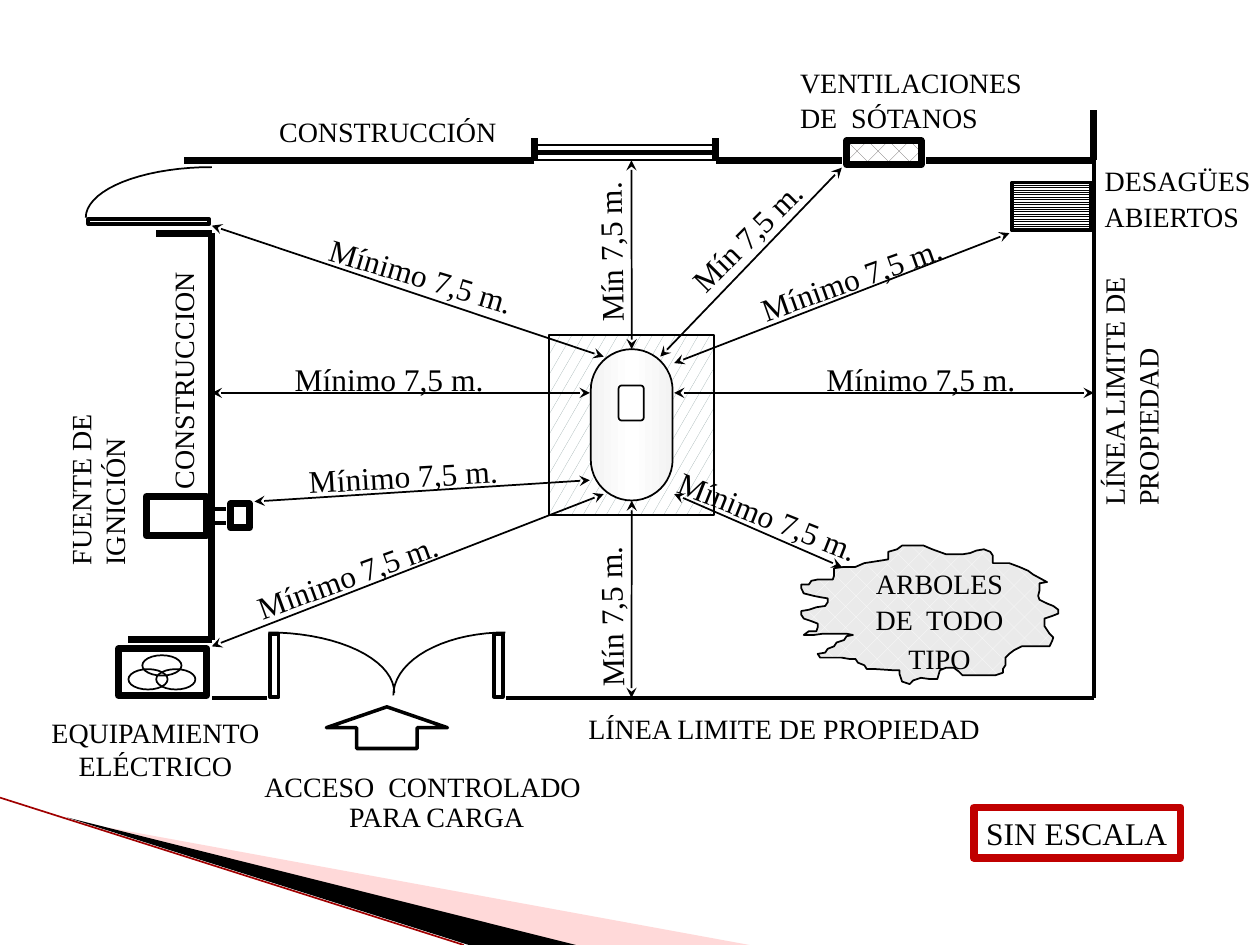
import copy
import math

from lxml import etree
from pptx import Presentation
from pptx.dml.color import RGBColor
from pptx.enum.dml import MSO_PATTERN
from pptx.enum.shapes import MSO_CONNECTOR, MSO_SHAPE
from pptx.enum.text import MSO_AUTO_SIZE, PP_ALIGN
from pptx.oxml.ns import qn
from pptx.util import Cm, Pt

RECT, ROUND, OVAL = MSO_SHAPE.RECTANGLE, MSO_SHAPE.ROUNDED_RECTANGLE, MSO_SHAPE.OVAL
ARROW = MSO_SHAPE.UP_ARROW
STRAIGHT = MSO_CONNECTOR.STRAIGHT
DIAMONDS, CONFETTI = MSO_PATTERN.DOTTED_DIAMOND, MSO_PATTERN.SMALL_CONFETTI
STRIPES = MSO_PATTERN.LIGHT_HORIZONTAL
LEFT, CENTER = PP_ALIGN.LEFT, PP_ALIGN.CENTER
BLACK = RGBColor(0x00, 0x00, 0x00)
WHITE = RGBColor(0xFF, 0xFF, 0xFF)
RED = RGBColor(0xC0, 0x00, 0x00)
DARK_RED = RGBColor(0xA0, 0x00, 0x00)
PINK = RGBColor(0xFF, 0xA2, 0xA2)
PALE = RGBColor(0xEA, 0xEA, 0xEA)
STEEL = RGBColor(0xF3, 0xF3, 0xF3)
HATCH = RGBColor(0x96, 0xA9, 0xA9)
GREY = RGBColor(0x69, 0x64, 0x64)


def paint(s, fill=None, line=BLACK, width=1):
    """Fill is None, a colour, or (pattern, foreground, background)."""
    s.shadow.inherit = False
    if fill is None:
        s.fill.background()
    elif isinstance(fill, RGBColor):
        s.fill.solid()
        s.fill.fore_color.rgb = fill
    else:
        s.fill.patterned()
        s.fill.pattern, s.fill.fore_color.rgb, s.fill.back_color.rgb = fill
    if line is None:
        s.line.fill.background()
    else:
        s.line.color.rgb = line
        s.line.width = Pt(width)


def write_text(s, text, size=16, spacing=(), align=LEFT, indent=0):
    """Spacing and indent (cm) apply to the paragraphs after the first."""
    tf = s.text_frame
    tf.word_wrap = True
    tf.auto_size = MSO_AUTO_SIZE.SHAPE_TO_FIT_TEXT
    for i, words in enumerate(text.split("\n")):
        p = tf.paragraphs[0] if i == 0 else tf.add_paragraph()
        p.alignment = align
        if i:
            p.line_spacing = spacing[i - 1]
            p.space_before = Pt(9.5)
            p._p.get_or_add_pPr().set("marL", str(Cm(indent)))
        r = p.add_run()
        r.text = words
        r.font.name, r.font.size, r.font.color.rgb = "Times New Roman", Pt(size), BLACK


prs = Presentation()
prs.slide_width, prs.slide_height = Cm(25.4), Cm(19.05)
slide = prs.slides.add_slide(prs.slide_layouts[6])
shapes = slide.shapes

# Corner decoration
for color, alpha, points in (
    (PINK, 40, [(1.4, 16.54), (15.11, 19.05), (11.58, 19.05)]),
    (BLACK, 100, [(1.35, 16.48), (11.61, 19.05), (9.45, 19.05)]),
):
    points = [(Cm(x), Cm(y)) for x, y in points]
    builder = shapes.build_freeform(*points[0])
    builder.add_line_segments(points[1:], close=True)
    s = builder.convert_to_shape()
    paint(s, color, None)
    if alpha < 100:
        rgb = s._element.spPr.find(".//" + qn("a:srgbClr"))
        etree.SubElement(rgb, qn("a:alpha")).set("val", str(alpha * 1000))

# Tree outline, in hundredths of an inch
TREE = [
    (679, 450), (686, 447), (699, 445), (705, 444), (705, 438), (712, 436), (716, 433),
    (733, 433), (740, 436), (751, 440), (764, 440), (770, 439), (775, 437), (781, 436),
    (786, 438), (788, 441), (788, 447), (801, 447), (809, 450), (816, 453), (820, 456),
    (831, 462), (825, 463), (825, 469), (824, 473), (825, 476), (831, 479), (836, 481),
    (840, 484), (840, 487), (835, 489), (829, 491), (829, 497), (831, 500), (833, 503),
    (836, 506), (835, 509), (833, 513), (811, 513), (805, 516), (801, 519), (798, 522),
    (798, 528), (796, 531), (796, 534), (790, 536), (764, 536), (761, 533), (757, 530),
    (751, 530), (746, 532), (744, 539), (738, 539), (731, 538), (725, 540), (722, 543),
    (716, 541), (714, 535), (714, 532), (709, 532), (694, 531), (688, 531), (686, 528),
    (681, 526), (679, 523), (674, 523), (668, 522), (651, 522), (649, 519), (655, 518),
    (657, 515), (662, 513), (664, 510), (670, 508), (672, 505), (677, 504), (672, 503),
    (653, 503), (646, 504), (638, 504), (642, 501), (648, 501), (649, 498), (649, 495),
    (644, 493), (638, 491), (636, 488), (636, 485), (642, 484), (648, 482), (655, 481),
    (657, 478), (657, 475), (651, 474), (646, 473), (638, 471), (636, 467), (636, 464),
    (642, 464), (644, 461), (649, 460), (661, 460), (662, 457), (662, 451), (670, 450),
]
builder = shapes.build_freeform(*TREE[0], scale=Cm(2.54) / 100)
builder.add_line_segments(TREE[1:], close=True)
paint(builder.convert_to_shape(), (DIAMONDS, WHITE, PALE))

# Buildings, equipment and openings: kind, left, top, width, height, line width, fill
paint(shapes.add_shape(RECT, Cm(11.07), Cm(6.76), Cm(3.33), Cm(3.63)), (CONFETTI, HATCH, WHITE))
tank = shapes.add_shape(ROUND, Cm(11.91), Cm(7.04), Cm(1.65), Cm(3.05))
tank.adjustments[0] = 0.5
paint(tank)
tank.fill.gradient()
tank.fill.gradient_angle = 0
stops = tank.fill.gradient_stops
first, last = stops[0], stops[1]
first.color.rgb, last.color.rgb = STEEL, WHITE
first.position, last.position = 0, 0.5
end = copy.deepcopy(first._gs)
end.set("pos", "100000")
last._gs.addnext(end)

for kind, x, y, w, h, width, fill in (
    (RECT, 2.95, 10.01, 1.22, 0.79, 4, None),
    (RECT, 4.65, 10.16, 0.38, 0.48, 4, None),
    (RECT, 2.39, 13.08, 1.78, 0.94, 4, None),
    (OVAL, 2.59, 13.49, 0.79, 0.41, 1, None),
    (OVAL, 3.15, 13.49, 0.79, 0.41, 1, None),
    (OVAL, 2.87, 13.21, 0.79, 0.41, 1, None),
    (RECT, 20.4, 3.68, 1.6, 0.97, 2, (STRIPES, BLACK, WHITE)),
    (RECT, 17.07, 2.84, 1.5, 0.48, 4, (DIAMONDS, GREY, WHITE)),
    (ROUND, 12.47, 7.77, 0.51, 0.71, 1, WHITE),
    (RECT, 1.78, 4.42, 2.44, 0.1, 2, None),
    (RECT, 5.44, 12.78, 0.18, 1.27, 2, None),
    (RECT, 9.96, 12.78, 0.18, 1.27, 2, None),
    (ARROW, 6.58, 14.25, 2.44, 0.84, 2, None),
):
    s = shapes.add_shape(kind, Cm(x), Cm(y), Cm(w), Cm(h))
    if kind == ROUND:
        s.adjustments[0] = 0.13
    paint(s, fill, width=width)

# Door swings: quarter ellipses given by centre, radii and side
for cx, cy, rx, ry, side in (
    (4.27, 4.39, 2.54, 1.02, -1),
    (5.41, 13.97, 2.54, 1.22, 1),
    (10.19, 14.02, 2.26, 1.27, -1),
):
    angles = [math.radians(a) for a in range(0, 91, 5)]
    points = [(Cm(cx + side * rx * math.cos(a)), Cm(cy - ry * math.sin(a))) for a in angles]
    builder = shapes.build_freeform(*points[0])
    builder.add_line_segments(points[1:], close=False)
    paint(builder.convert_to_shape())

# Walls and limits, then the two-headed distance arrows
WALLS = [
    (14.43, 3.23, 16.97, 3.23, 4), (3.15, 4.7, 4.27, 4.7, 4), (4.27, 4.7, 4.27, 12.9, 4),
    (18.67, 3.23, 22.05, 3.23, 4), (22.05, 3.23, 22.05, 14.07, 2),
    (10.21, 14.07, 22.05, 14.07, 2), (4.27, 12.9, 2.59, 12.9, 4),
    (22.05, 3.23, 22.05, 2.21, 4), (10.77, 3.23, 3.71, 3.23, 4),
    (10.77, 3.23, 10.77, 2.79, 4), (14.43, 3.23, 14.43, 2.79, 4),
    (10.77, 3.07, 14.43, 3.07, 3), (10.77, 2.92, 14.43, 2.92, 1),
    (10.49, 3.23, 14.43, 3.23, 1), (5.38, 14.07, 4.27, 14.07, 2),
    (4.55, 10.26, 4.27, 10.26, 2), (4.55, 10.54, 4.27, 10.54, 2),
]
DISTANCES = [
    (11.89, 9.68, 5.13, 10.11), (4.27, 4.55, 12.17, 7.19), (11.89, 7.92, 4.27, 7.92),
    (12.17, 9.96, 4.27, 13.03), (13.59, 9.96, 16.97, 11.43), (13.59, 7.92, 22.05, 7.92),
    (20.35, 4.7, 13.59, 7.32), (16.97, 3.38, 13.31, 7.19),
    (12.73, 3.23, 12.73, 7.04), (12.73, 14.07, 12.73, 10.09),
]
lines = [(*wall, BLACK, False) for wall in WALLS]
lines += [(*distance, 1, BLACK, True) for distance in DISTANCES]
lines.append((0, 16.08, 9.35, 19.05, 0.95, DARK_RED, False))
for x1, y1, x2, y2, width, color, measured in lines:
    c = shapes.add_connector(STRAIGHT, Cm(x1), Cm(y1), Cm(x2), Cm(y2))
    c.line.color.rgb, c.line.width = color, Pt(width)
    if measured:
        for tip in ("a:headEnd", "a:tailEnd"):
            etree.SubElement(c.line._get_or_add_ln(), qn(tip)).set("type", "stealth")
        if x1 == x2:
            c.end_connect(tank, 0 if y1 < y2 else 2)
    etree.SubElement(c._element.spPr, qn("a:effectLst"))

# Labels: text, left, top, width, height, rotation, format
LABELS = [
    ("LÍNEA LIMITE DE PROPIEDAD", 11.61, 14.22, 9.88, 0.94, 0, {}),
    ("LÍNEA LIMITE DE PROPIEDAD", 20.24, 7.06, 5.13, 1.63, 270, {}),
    ("CONSTRUCCION", 1.04, 6.99, 5.31, 0.94, 270, {}),
    ("CONSTRUCCIÓN", 5.38, 2.18, 8.46, 0.94, 0, {}),
    ("FUENTE DE IGNICIÓN", -0.38, 8.48, 4.7, 1.63, 270, {}),
    ("ARBOLES\nDE  TODO\nTIPO", 17.25, 11.3, 3.38, 2.44, 0,
     {"spacing": (0.5, 0.7), "align": CENTER}),
    ("EQUIPAMIENTO\nELÉCTRICO", 0.72, 14.3, 4.83, 1.55, 0, {"spacing": (0.4,), "align": CENTER}),
    ("DESAGÜES\nABIERTOS", 22.02, 3.18, 3.96, 1.63, 0, {"spacing": (0.5,)}),
    ("VENTILACIONES\nDE  SÓTANOS", 15.88, 1.19, 5.36, 1.63, 0, {"spacing": (0.5,)}),
    ("ACCESO  CONTROLADO\nPARA CARGA", 5.08, 15.39, 8.08, 1.5, 0,
     {"spacing": (0.3,), "indent": 1.71}),
]
for x, y, w, angle in (
    (16.41, 7.14, 4.8, 0), (5.69, 7.14, 4.8, 0), (5.97, 9.07, 4.8, 356.7),
    (13.31, 9.98, 4.8, 21.7), (14.99, 5.03, 4.8, 340.4), (4.83, 11.02, 4.8, 339.9),
    (6.32, 5.13, 4.93, 16.7),
):
    LABELS.append(("Mínimo 7,5 m.", x, y, w, 1.02, angle, {"size": 18}))
for x, y, w, angle in ((10.57, 11.84, 3.48, 269), (10.41, 4.34, 3.78, 269), (13.26, 3.94, 4.22, 315)):
    LABELS.append(("Mín 7,5 m.", x, y, w, 1.02, angle, {"size": 18}))
for text, x, y, w, h, angle, style in LABELS:
    s = shapes.add_textbox(Cm(x), Cm(y), Cm(w), Cm(h))
    s.rotation = angle
    write_text(s, text, **style)

note = shapes.add_shape(RECT, Cm(19.63), Cm(16.28), Cm(4.17), Cm(1.02))
paint(note, WHITE, RED, 4.33)
write_text(note, "SIN ESCALA", size=18)

prs.save("out.pptx")
